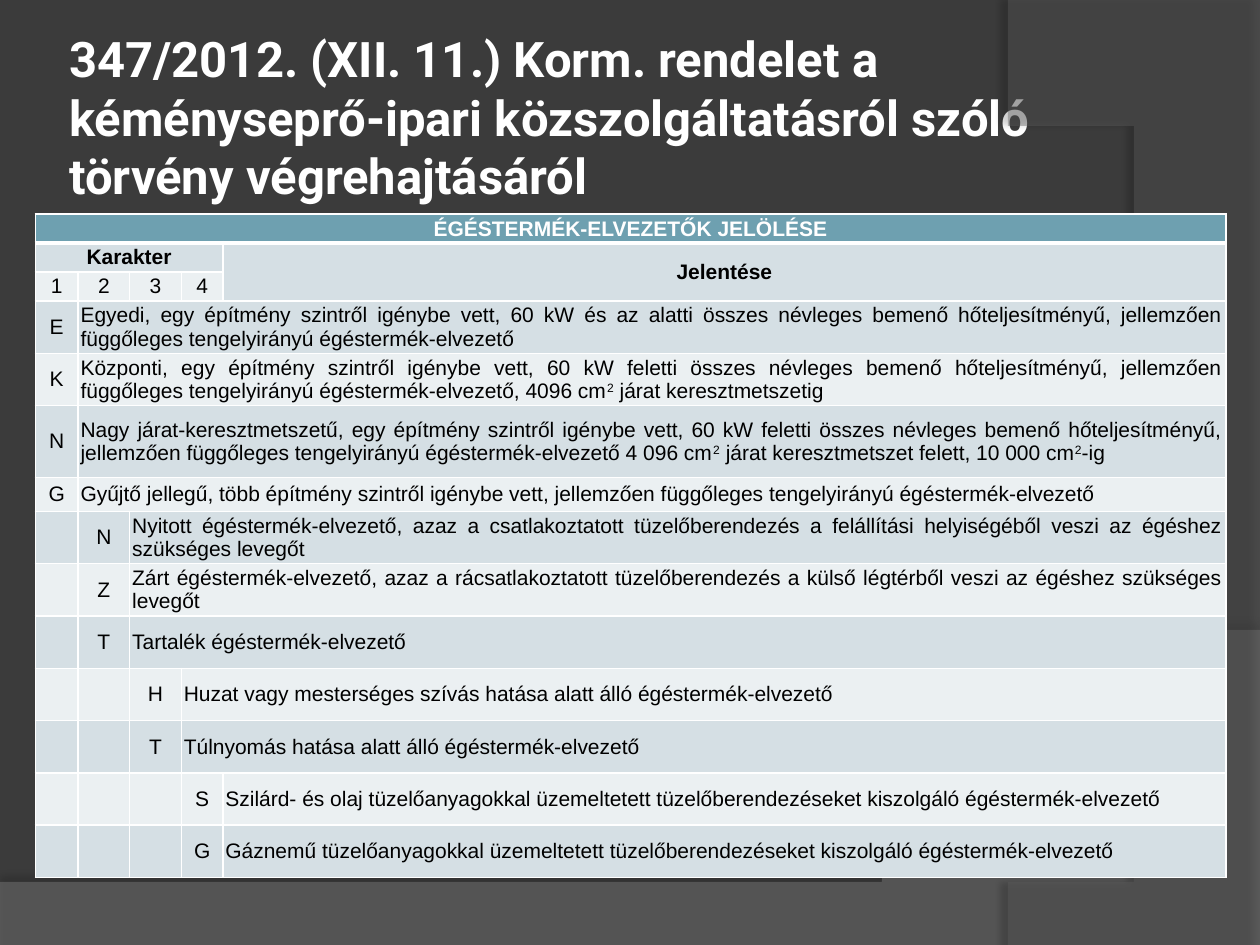
from lxml import etree
from pptx import Presentation
from pptx.dml.color import RGBColor
from pptx.enum.text import MSO_ANCHOR, MSO_AUTO_SIZE, PP_ALIGN
from pptx.oxml.ns import qn
from pptx.util import Emu, Inches, Pt

CENTER, JUSTIFY, LEFT = PP_ALIGN.CENTER, PP_ALIGN.JUSTIFY, PP_ALIGN.LEFT
MIDDLE = MSO_ANCHOR.MIDDLE
NO_AUTOFIT = MSO_AUTO_SIZE.NONE

TITLE = ("347/2012. (XII. 11.) Korm. rendelet a kéményseprő-ipari "
         "közszolgáltatásról szóló törvény végrehajtásáról")
TABLE_HEADING = "ÉGÉSTERMÉK-ELVEZETŐK JELÖLÉSE"
CHARACTER_HEADING, MEANING_HEADING = "Karakter", "Jelentése"
CODES = [
    (0, "E", "Egyedi, egy építmény szintről igénybe vett, 60 kW és az alatti összes névleges bemenő "
             "hőteljesítményű, jellemzően függőleges tengelyirányú égéstermék-elvezető"),
    (0, "K", "Központi, egy építmény szintről igénybe vett, 60 kW feletti összes névleges bemenő "
             "hőteljesítményű, jellemzően függőleges tengelyirányú égéstermék-elvezető, "
             "4096 cm|2| járat keresztmetszetig"),
    (0, "N", "Nagy járat-keresztmetszetű, egy építmény szintről igénybe vett, 60 kW feletti összes "
             "névleges bemenő hőteljesítményű, jellemzően függőleges tengelyirányú "
             "égéstermék-elvezető 4 096 cm|2| járat keresztmetszet felett, 10 000 cm|2|-ig"),
    (0, "G", "Gyűjtő jellegű, több építmény szintről igénybe vett, jellemzően függőleges "
             "tengelyirányú égéstermék-elvezető"),
    (1, "N", "Nyitott égéstermék-elvezető, azaz a csatlakoztatott tüzelőberendezés a felállítási "
             "helyiségéből veszi az égéshez szükséges levegőt"),
    (1, "Z", "Zárt égéstermék-elvezető, azaz a rácsatlakoztatott tüzelőberendezés a külső légtérből "
             "veszi az égéshez szükséges levegőt"),
    (1, "T", "Tartalék égéstermék-elvezető"),
    (2, "H", "Huzat vagy mesterséges szívás hatása alatt álló égéstermék-elvezető"),
    (2, "T", "Túlnyomás hatása alatt álló égéstermék-elvezető"),
    (3, "S", "Szilárd- és olaj tüzelőanyagokkal üzemeltetett tüzelőberendezéseket kiszolgáló "
             "égéstermék-elvezető"),
    (3, "G", "Gáznemű tüzelőanyagokkal üzemeltetett tüzelőberendezéseket kiszolgáló "
             "égéstermék-elvezető"),
]
COLUMN_WIDTHS = [0.34, 0.41, 0.41, 0.33, 7.96]
HEADER_HEIGHT, CODE_HEIGHT = 0.23, 0.415
SPECIAL_HEIGHTS = {5: 0.57, 6: 0.27}
HEADER_FILL, BAND_FILLS = "6EA0B0", ("EBF0F2", "D5DFE4")
WHITE, BLACK, BACKGROUND = "FFFFFF", "000000", "3B3B3B"

WAVES = [
    {"curve": [(10, 5.2), (5.59, 7.29), (3.91, 7.19), (0, 7.05)], "corners": [(0, 7.5), (10, 7.5)],
     "color": "7F7F7F", "opacity": 45, "shadow_opacity": 35, "distance": 3.5, "angle": 270},
    {"curve": [(8.21, 7.5), (9.35, 6.19), (10.18, 3), (8, 0)], "corners": [(10, 0.02), (10, 7.5)],
     "color": "5E5E5E", "opacity": 40, "shadow_opacity": 45, "distance": 4, "angle": 180},
]
CURVE_STEPS = 60


def rgb(color):
    return RGBColor.from_string(color)


def add_child(parent, tag, **attributes):
    child = etree.SubElement(parent, qn(tag))
    for name, value in attributes.items():
        child.set(name, str(value))
    return child


def write_text(frame, text, size=12, font="Arial", color=BLACK, bold=False, align=CENTER):
    paragraph = frame.paragraphs[0]
    paragraph.alignment = align
    for index, part in enumerate(text.split("|")):
        run = paragraph.add_run()
        run.text = part
        run.font.size, run.font.name, run.font.bold = Pt(size), font, bold
        run.font.color.rgb = rgb(color)
        if index % 2:
            run.font._element.set("baseline", "30000")


def bezier_points(start, first, second, end):
    for step in range(CURVE_STEPS + 1):
        t = step / CURVE_STEPS
        weights = ((1 - t) ** 3, 3 * t * (1 - t) ** 2, 3 * t * t * (1 - t), t ** 3)
        yield tuple(sum(weight * point[axis] for weight, point in
                        zip(weights, (start, first, second, end))) for axis in (0, 1))


def add_wave(slide, wave):
    points = list(bezier_points(*wave["curve"])) + wave["corners"]
    builder = slide.shapes.build_freeform(*points[0], scale=Inches(1))
    builder.add_line_segments(points[1:], close=True)
    shape = builder.convert_to_shape()
    shape.shadow.inherit = False
    shape.line.fill.background()
    shape.fill.solid()
    shape.fill.fore_color.rgb = rgb(wave["color"])
    properties = shape._element.spPr
    fill_color = properties.find(qn("a:solidFill")).find(qn("a:srgbClr"))
    add_child(fill_color, "a:alpha", val=wave["opacity"] * 1000)
    shadow = add_child(properties.find(qn("a:effectLst")), "a:outerShdw", blurRad=Pt(4),
                       dist=Pt(wave["distance"]), dir=wave["angle"] * 60000)
    shadow_color = add_child(shadow, "a:srgbClr", val=BLACK)
    add_child(shadow_color, "a:alpha", val=wave["shadow_opacity"] * 1000)


def format_cell(cell, color, bottom_width):
    cell.margin_left = cell.margin_right = cell.margin_top = cell.margin_bottom = Inches(0.02)
    cell.vertical_anchor = MIDDLE
    properties = cell._tc.get_or_add_tcPr()
    for side, width in (("L", 1), ("R", 1), ("T", 1), ("B", bottom_width)):
        line = add_child(properties, f"a:ln{side}", w=Pt(width))
        add_child(add_child(line, "a:solidFill"), "a:srgbClr", val=WHITE)
    cell.fill.solid()
    cell.fill.fore_color.rgb = rgb(color)


def add_code_table(slide):
    header_rows, last = 3, len(COLUMN_WIDTHS) - 1
    heights = [HEADER_HEIGHT] * header_rows + [
        SPECIAL_HEIGHTS.get(row, CODE_HEIGHT) for row in range(header_rows, header_rows + len(CODES))]
    frame = slide.shapes.add_table(len(heights), len(COLUMN_WIDTHS), Inches(0.28), Inches(1.7),
                                   Inches(sum(COLUMN_WIDTHS)), Inches(sum(heights)))
    table = frame.table
    for column, width in zip(table.columns, COLUMN_WIDTHS):
        column.width = Inches(width)
    for index, height in enumerate(heights):
        table.rows[index].height = Inches(height)
        for cell in table.rows[index].cells:
            format_cell(cell, BAND_FILLS[index % 2] if index else HEADER_FILL, 1 if index else 3)

    def place(text, row, column, last_row, last_column, **text_format):
        cell = table.cell(row, column)
        if (row, column) != (last_row, last_column):
            cell.merge(table.cell(last_row, last_column))
        write_text(cell.text_frame, text, **text_format)

    place(TABLE_HEADING, 0, 0, 0, last, color=WHITE, bold=True)
    place(CHARACTER_HEADING, 1, 0, 1, last - 1, bold=True)
    place(MEANING_HEADING, 1, last, 2, last, bold=True)
    for column in range(last):
        place(str(column + 1), 2, column, 2, column)
    for row, (column, letter, meaning) in enumerate(CODES, header_rows):
        place(letter, row, column, row, column)
        place(meaning, row, column + 1, row, last, align=JUSTIFY)


def main():
    presentation = Presentation()
    presentation.slide_width, presentation.slide_height = Inches(10), Inches(7.5)
    slide = presentation.slides.add_slide(presentation.slide_layouts[5])
    slide.background.fill.solid()
    slide.background.fill.fore_color.rgb = rgb(BACKGROUND)
    for wave in WAVES:
        add_wave(slide, wave)
    add_code_table(slide)
    title = slide.shapes.title
    title.left, title.top, title.width, title.height = map(Inches, (0.5, 0.3, 9, 1.25))
    frame = title.text_frame
    frame.auto_size, frame.word_wrap, frame.vertical_anchor = NO_AUTOFIT, True, MIDDLE
    frame.margin_left = frame.margin_right = frame.margin_top = frame.margin_bottom = Inches(0.05)
    write_text(frame, TITLE, size=28, font="Roboto", color=WHITE, bold=True, align=LEFT)
    presentation.save("out.pptx")


if __name__ == "__main__":
    main()
